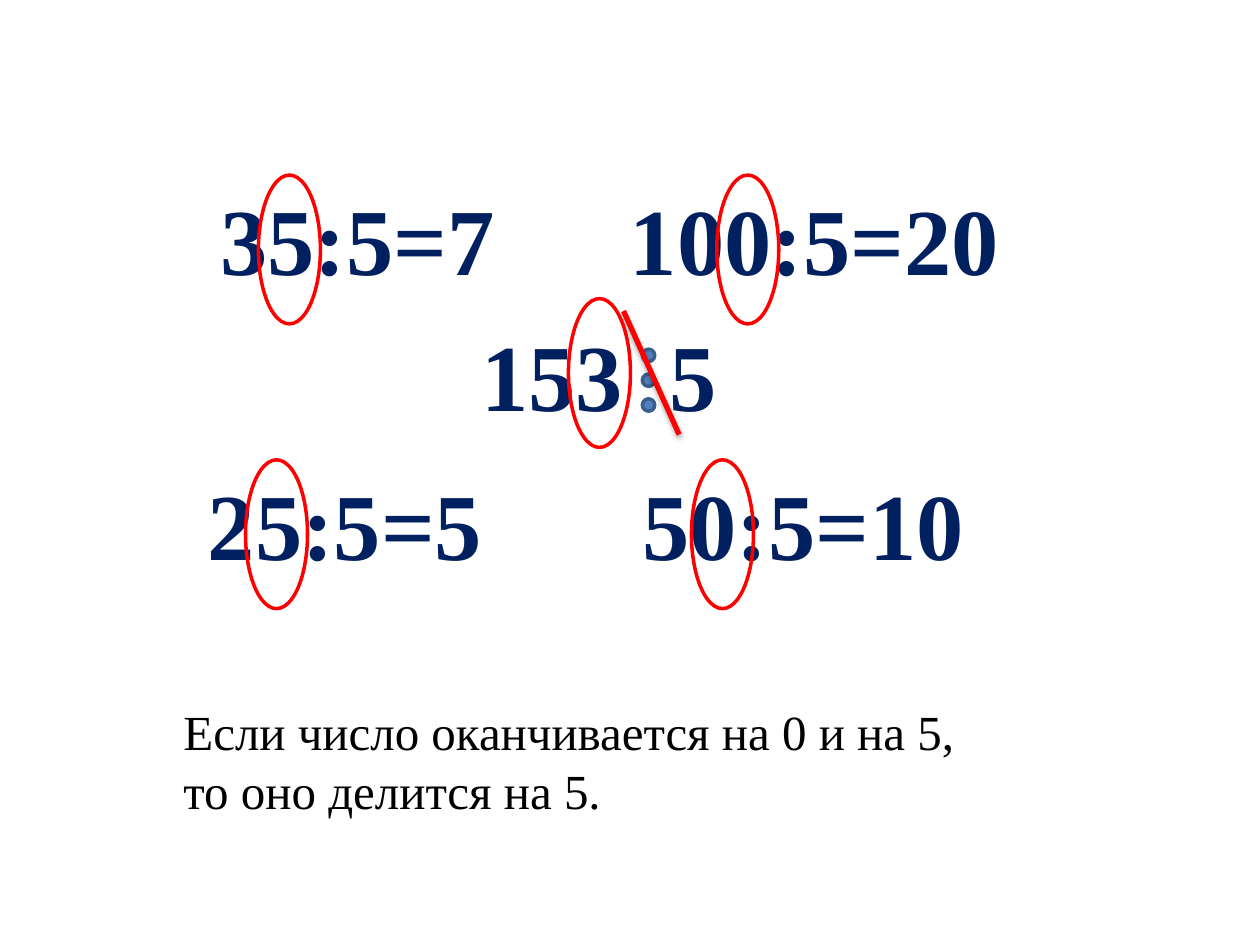
import pptx
import pptx.util
import pptx.dml.color
import pptx.enum.shapes
import pptx.enum.text
import pptx.oxml
import pptx.oxml.ns

Cm = pptx.util.Cm
Pt = pptx.util.Pt


def color(value):
    return pptx.dml.color.RGBColor.from_string(value)


class Board:
    font = "Times New Roman"
    navy = "002060"
    red = "FF0000"

    def __init__(self, s):
        self.s = s
        self.shapes = s.shapes

    def text(self, x, y, w, h, text, size=54, c=navy, bold=True, tab=None):
        sp = self.shapes.add_textbox(Cm(x), Cm(y), Cm(w), Cm(h))
        tf = sp.text_frame
        tf.word_wrap = True
        tf.auto_size = pptx.enum.text.MSO_AUTO_SIZE.NONE
        p = tf.paragraphs[0]
        if tab:
            ns = pptx.oxml.ns.nsdecls("a")
            p._p.get_or_add_pPr().append(pptx.oxml.parse_xml(
                f'<a:tabLst {ns}><a:tab pos="{Cm(tab)}" algn="l"/></a:tabLst>'))
        r = p.add_run()
        r.text = text
        r.font.name = self.font
        r.font.size = Pt(size)
        r.font.bold = bold
        r.font.color.rgb = color(c)

    def ellipse(self, x, y, w=1.25, h=3, line=red, fill=None):
        sp = self.shapes.add_shape(
            pptx.enum.shapes.MSO_SHAPE.OVAL, Cm(x), Cm(y), Cm(w), Cm(h))
        sp.shadow.inherit = False
        sp.line.color.rgb = color(line)
        sp.line.width = Pt(2)
        if fill:
            sp.fill.solid()
            sp.fill.fore_color.rgb = color(fill)
        else:
            sp.fill.background()

    def strike(self, x1, y1, x2, y2):
        sp = self.shapes.add_connector(
            pptx.enum.shapes.MSO_CONNECTOR.STRAIGHT,
            Cm(x1), Cm(y1), Cm(x2), Cm(y2))
        sp.line.color.rgb = color(self.red)
        sp.line.width = Pt(3)
        ns = pptx.oxml.ns.nsdecls("a")
        sp._element.spPr.append(pptx.oxml.parse_xml(
            f'<a:effectLst {ns}><a:outerShdw blurRad="{Pt(3.1)}" dist="{Pt(1.8)}" '
            'dir="5400000" rotWithShape="0"><a:srgbClr val="000000">'
            '<a:alpha val="35000"/></a:srgbClr></a:outerShdw></a:effectLst>'))

    def group(self):
        self.shapes = self.s.shapes.add_group_shape().shapes

    def ungroup(self):
        self.shapes = self.s.shapes


def main():
    prs = pptx.Presentation()
    prs.slide_width, prs.slide_height = Cm(25.4), Cm(19.05)
    board = Board(prs.slides.add_slide(prs.slide_layouts[6]))

    top, bottom = 3.53, 9.27
    examples = [
        ("35:5=7", 4.19, top, 6.25, 4.88, 5.21),
        ("25:5=5", 3.94, bottom, 6.25, 2.57, 4.95),
        ("50:5=10", 12.7, bottom, 11.25, 4.88, 13.94),
        ("100:5=20", 12.45, top, 10, 4.88, 14.45),
    ]
    for text, x, y, w, h, _ in examples:
        board.text(x, y, w, h, text)
    for _, _, y, _, _, mark in examples:
        board.ellipse(mark, y)
    board.text(3.45, 14.02, 16.51, 2.64,
               "Если число оканчивается на 0 и на 5, то оно делится на 5.",
               size=28, c="000000", bold=False)

    board.group()
    board.text(9.45, 6.27, 6.25, 4.88, "153\t5", tab=3.79)
    for i in range(3):
        board.ellipse(12.95, 7.04 + 0.5 * i, 0.25, 0.25, "3A5F8C", "4F81BD")
    board.strike(12.57, 6.27, 13.69, 8.76)
    board.ungroup()
    board.ellipse(11.46, 6.02)

    prs.save("out.pptx")


if __name__ == "__main__":
    main()
